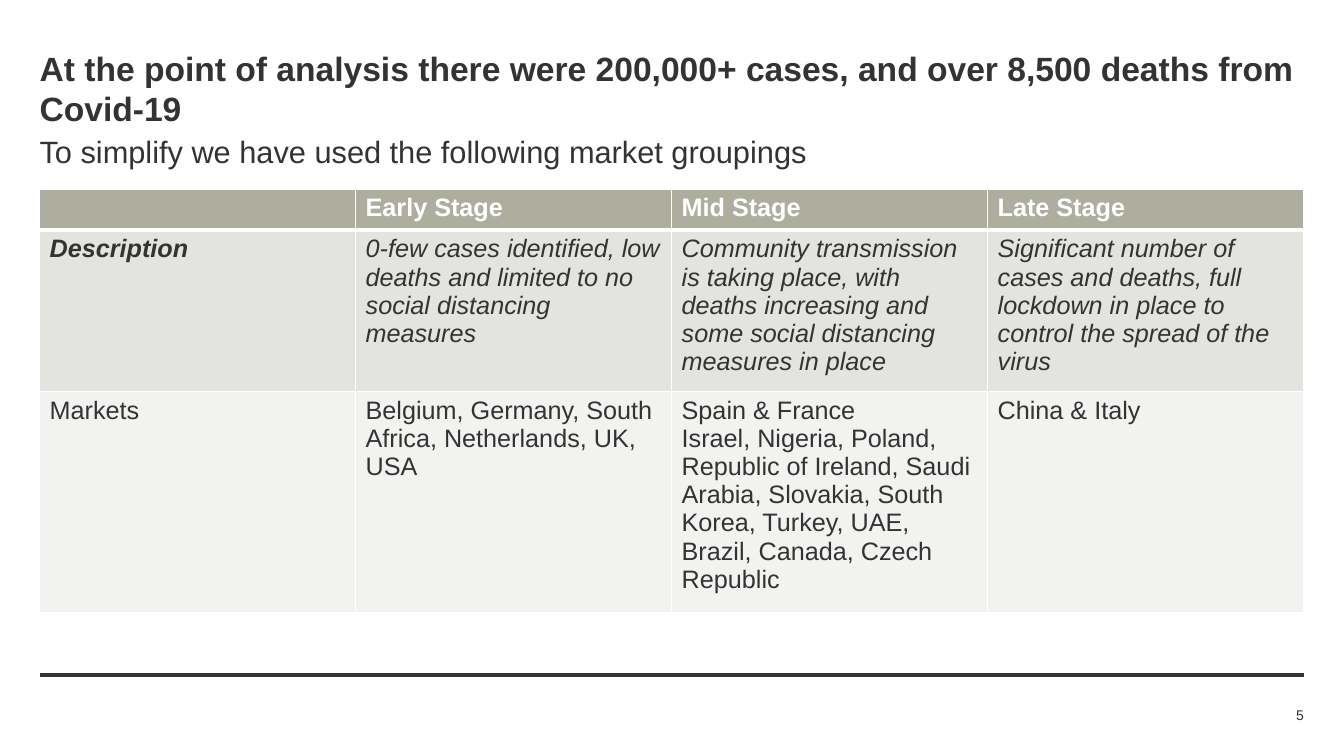
import dataclasses

import pptx
import pptx.dml.color
import pptx.enum.shapes
import pptx.enum.text
import pptx.oxml
import pptx.oxml.ns
import pptx.util

Pt = pptx.util.Pt
ALIGN = pptx.enum.text.PP_ALIGN
ANCHOR = pptx.enum.text.MSO_ANCHOR


@dataclasses.dataclass(frozen=True)
class Theme:
    font: str = "Arial"
    ink: str = "333333"
    white: str = "FFFFFF"
    head: str = "AEAE9F"
    bands: tuple = ("E3E3DF", "F2F2F0")
    title: int = 24
    lead: int = 22
    body: int = 18
    note: int = 10


def color(code):
    return pptx.dml.color.RGBColor.from_string(code)


class Deck:
    def __init__(self, theme):
        self.theme = theme
        self.show = pptx.Presentation()
        self.show.slide_width, self.show.slide_height = Pt(960), Pt(540)
        self.slide = self.show.slides.add_slide(self.show.slide_layouts[6])

    def fill(self, frame, text, style, align=ALIGN.LEFT):
        """Fill a frame, one paragraph for each line of text."""
        frame.text = text
        form = {"name": self.theme.font, "size": Pt(style["size"]),
                "bold": style.get("bold", False),
                "italic": style.get("italic", False)}
        for para in frame.paragraphs:
            para.alignment = align
            for run in para.runs:
                run.font.color.rgb = color(style.get("ink", self.theme.ink))
                for key, value in form.items():
                    setattr(run.font, key, value)

    def text(self, box, text, style, align=ALIGN.LEFT, anchor=ANCHOR.TOP):
        frame = self.slide.shapes.add_textbox(*map(Pt, box)).text_frame
        sides = ("left", "top", "right", "bottom")
        form = {"word_wrap": True, "vertical_anchor": anchor}
        form.update({f"margin_{side}": 0 for side in sides})
        for key, value in form.items():
            setattr(frame, key, value)
        self.fill(frame, text, style, align)

    def rule(self, left, right, top, width):
        kind = pptx.enum.shapes.MSO_CONNECTOR.STRAIGHT
        line = self.slide.shapes.add_connector(
            kind, Pt(left), Pt(top), Pt(right), Pt(top))
        line.line.color.rgb = color(self.theme.ink)
        line.line.width = Pt(width)
        line._element.spPr.append(pptx.oxml.parse_xml(
            f'<a:effectLst {pptx.oxml.ns.nsdecls("a")}/>'))

    def edge(self, cell, widths):
        """Draw cell borders in the order left, right, top, bottom."""
        props = cell._tc.get_or_add_tcPr()
        for side, width in zip("LRTB", widths):
            props.append(pptx.oxml.parse_xml(
                f'<a:ln{side} {pptx.oxml.ns.nsdecls("a")} w="{Pt(width)}">'
                f'<a:solidFill><a:srgbClr val="{self.theme.white}"/>'
                f'</a:solidFill></a:ln{side}>'))

    def table(self, box, heights, rows):
        theme = self.theme
        grid = self.slide.shapes.add_table(
            len(rows), len(rows[0]), *map(Pt, box)).table
        for row, height in zip(grid.rows, heights):
            row.height = Pt(height)
        fills = (theme.head, *theme.bands)
        looks = ({"ink": theme.white, "bold": True}, {"italic": True}, {})
        edges = ((1, 1, 1, 3), (1, 1, 3, 1), (1, 1, 1, 1))
        for r, row in enumerate(rows):
            for c, text in enumerate(row):
                cell = grid.cell(r, c)
                style = {"size": theme.body, **looks[r]}
                if (r, c) == (1, 0):
                    style["bold"] = True
                self.edge(cell, edges[r])
                cell.fill.solid()
                cell.fill.fore_color.rgb = color(fills[r])
                self.fill(cell.text_frame, text, style)


ROWS = (
    ("", "Early Stage", "Mid Stage", "Late Stage"),
    ("Description",
     "0-few cases identified, low deaths and limited to no social "
     "distancing measures",
     "Community transmission is taking place, with deaths increasing and "
     "some social distancing measures in place",
     "Significant number of cases and deaths, full lockdown in place to "
     "control the spread of the virus"),
    ("Markets",
     "Belgium, Germany, South Africa, Netherlands, UK, USA",
     "Spain & France\nIsrael, Nigeria, Poland, Republic of Ireland, Saudi "
     "Arabia, Slovakia, South Korea, Turkey, UAE, Brazil, Canada, Czech "
     "Republic",
     "China & Italy"),
)


def main():
    theme = Theme()
    deck = Deck(theme)
    left, width = 28.3, 903
    deck.rule(left, left + width, 482, 3)
    deck.text((left, 34, width, 58),
              "At the point of analysis there were 200,000+ cases, and over "
              "8,500 deaths from Covid-19",
              {"size": theme.title, "bold": True})
    deck.text((left, 95, width, 31),
              "To simplify we have used the following market groupings",
              {"size": theme.lead})
    deck.table((left, 135, width, 285), (29.2, 107.6, 148.2), ROWS)
    deck.text((855, 503, 76.3, 16), "5", {"size": theme.note},
              ALIGN.RIGHT, ANCHOR.MIDDLE)
    deck.show.save("out.pptx")


if __name__ == "__main__":
    main()
